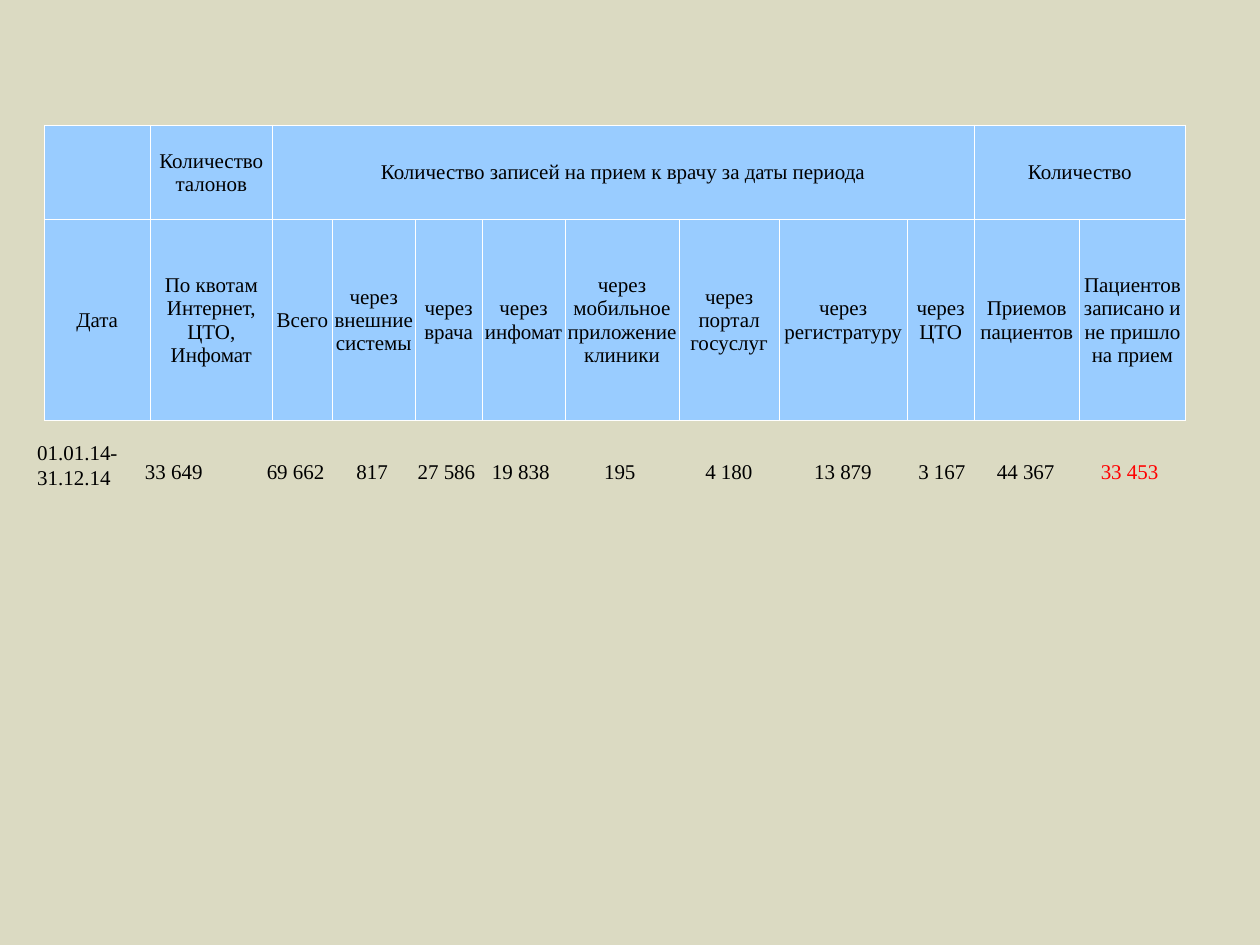
from dataclasses import dataclass

from lxml import etree
from pptx import Presentation
from pptx.dml.color import RGBColor
from pptx.enum.text import MSO_ANCHOR, PP_ALIGN
from pptx.oxml.ns import qn
from pptx.util import Cm, Pt

CENTER = PP_ALIGN.CENTER
LEFT = PP_ALIGN.LEFT
MIDDLE = MSO_ANCHOR.MIDDLE
BOTTOM = MSO_ANCHOR.BOTTOM
BLANK_LAYOUT = 6
PLAIN_TABLE_STYLE = "{2D5ABB26-0587-4C30-8999-92F81FD0307C}"


@dataclass(frozen=True)
class Theme:
    font: str = "Times New Roman"
    size: float = 12
    background: str = "DBDAC2"
    text: str = "000000"
    alert: str = "FF0000"
    header: str = "99CCFF"
    border: str = "FFFFFF"
    border_width: float = 0.5


class SlideBuilder:
    def __init__(self, presentation, theme):
        self.theme = theme
        self.slide = presentation.slides.add_slide(
            presentation.slide_layouts[BLANK_LAYOUT])
        fill = self.slide.background.fill
        fill.solid()
        fill.fore_color.rgb = RGBColor.from_string(theme.background)

    def format_paragraph(self, paragraph, alignment, color=None):
        paragraph.alignment = alignment
        font = paragraph.font
        font.name = self.theme.font
        font.size = Pt(self.theme.size)
        font.color.rgb = RGBColor.from_string(color or self.theme.text)

    def add_borders(self, cell):
        properties = cell._tc.get_or_add_tcPr()
        for side in ("a:lnL", "a:lnR", "a:lnT", "a:lnB"):
            line = etree.SubElement(properties, qn(side),
                                    w=str(Pt(self.theme.border_width)))
            fill = etree.SubElement(line, qn("a:solidFill"))
            etree.SubElement(fill, qn("a:srgbClr"), val=self.theme.border)

    def add_table(self, left, top, widths, heights, rows, anchor, header=False):
        frame = self.slide.shapes.add_table(
            len(heights), len(widths), Cm(left), Cm(top),
            Cm(sum(widths)), Cm(sum(heights)))
        table = frame.table
        table.first_row = header
        table.horz_banding = False
        table._tbl.tblPr.find(qn("a:tableStyleId")).text = PLAIN_TABLE_STYLE
        for column, width in zip(table.columns, widths):
            column.width = Cm(width)
        for row, height in zip(table.rows, heights):
            row.height = Cm(height)
        for row, texts in zip(table.rows, rows):
            for cell, text in zip(row.cells, texts):
                cell.text = text
                cell.vertical_anchor = anchor
                cell.margin_left = cell.margin_right = cell.margin_top = Cm(0.02)
                cell.margin_bottom = Cm(0)
                self.format_paragraph(cell.text_frame.paragraphs[0], CENTER)
                if header:
                    self.add_borders(cell)
                    cell.fill.solid()
                    cell.fill.fore_color.rgb = RGBColor.from_string(
                        self.theme.header)
                else:
                    cell.fill.background()
        return table

    def add_text(self, left, top, width, height, text):
        shape = self.slide.shapes.add_textbox(
            Cm(left), Cm(top), Cm(width), Cm(height))
        shape.text_frame.word_wrap = True
        paragraph = shape.text_frame.paragraphs[0]
        paragraph.text = text
        self.format_paragraph(paragraph, LEFT)


def main():
    presentation = Presentation()
    presentation.slide_width = Cm(25.4)
    presentation.slide_height = Cm(19.05)
    theme = Theme()
    builder = SlideBuilder(presentation, theme)

    values = ["33 649", "69 662", "817", "27 586", "19 838", "195",
              "4 180", "13 879", "3 167", "44 367", "33 453"]
    value_widths = [2.79, 1.8, 1.6, 1.4, 1.6, 2.39, 2.01, 2.59, 1.4, 1.98, 2.21]
    value_table = builder.add_table(
        2.11, 8.53, value_widths, [1.22], [values], BOTTOM)
    value_table.cell(0, 1).margin_left = Cm(0.34)
    missed_visits = value_table.cell(0, len(values) - 1)
    builder.format_paragraph(
        missed_visits.text_frame.paragraphs[0], CENTER, theme.alert)

    groups = ["", "Количество талонов",
              "Количество записей на прием к врачу за даты периода",
              *[""] * 7, "Количество", ""]
    headings = ["Дата", "По квотам Интернет, ЦТО, Инфомат", "Всего",
                "через внешние системы", "через врача", "через инфомат",
                "через мобильное приложение клиники", "через портал госуслуг",
                "через регистратуру", "через ЦТО", "Приемов пациентов",
                "Пациентов записано и не пришло на прием"]
    header_widths = [2.14, 2.46, 1.21, 1.67, 1.35, 1.67,
                     2.3, 2.02, 2.58, 1.35, 2.12, 2.14]
    header_table = builder.add_table(
        0.89, 2.52, header_widths, [1.9, 4.06], [groups, headings], MIDDLE,
        header=True)
    for first, last in ((2, 9), (10, 11)):
        header_table.cell(0, first).merge(header_table.cell(0, last))

    builder.add_text(0.5, 8.74, 2.4, 1.28, "01.01.14-31.12.14")
    presentation.save("out.pptx")


if __name__ == "__main__":
    main()
